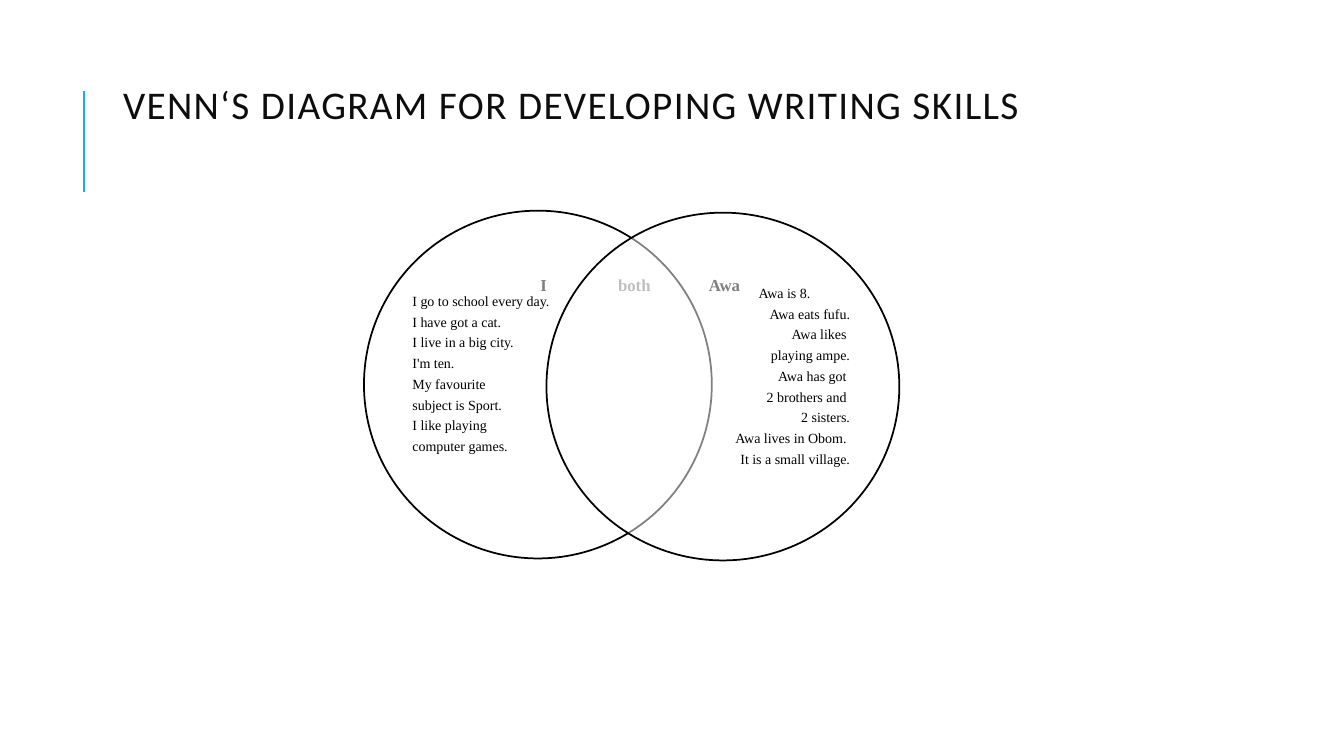
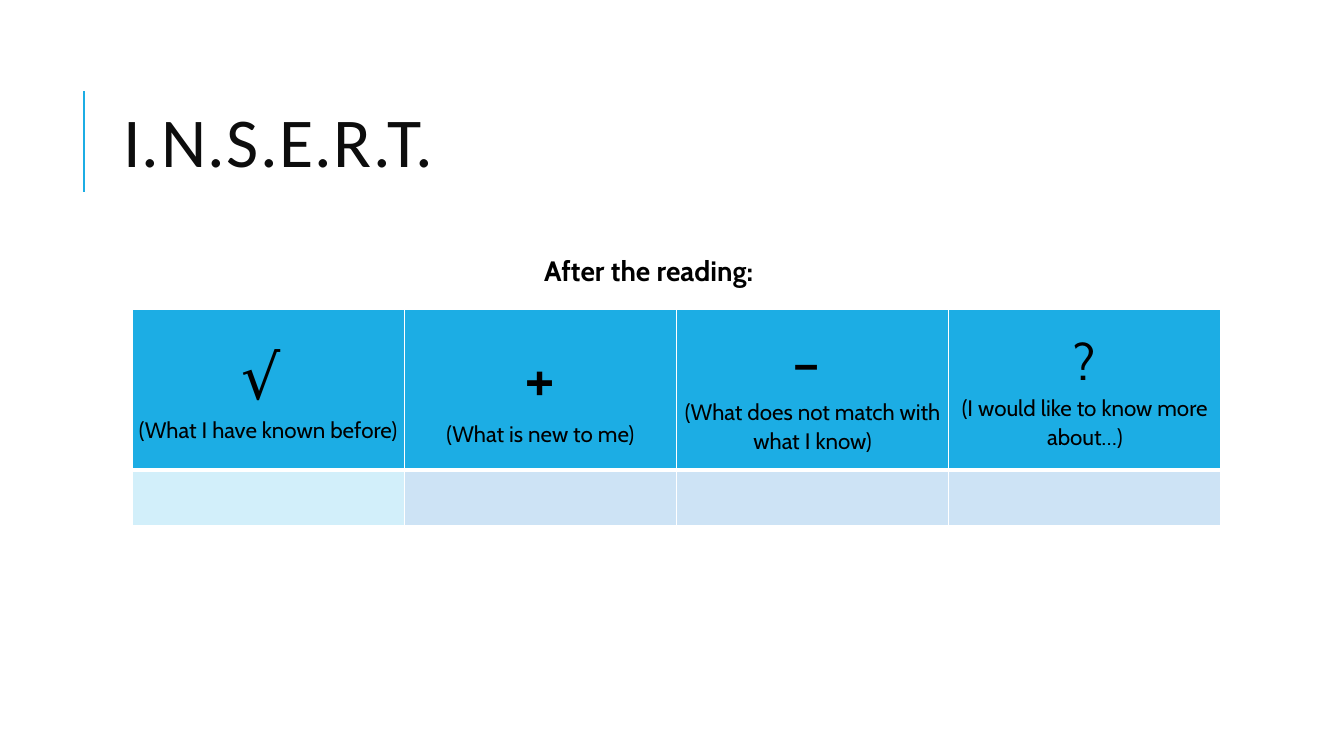
from pptx import Presentation
from pptx.dml.color import RGBColor
from pptx.enum.shapes import MSO_CONNECTOR, MSO_SHAPE
from pptx.enum.text import MSO_ANCHOR, PP_ALIGN
from pptx.oxml.ns import qn
from pptx.util import Inches, Pt
from lxml import etree

LEFT, MID, RIGHT = PP_ALIGN.LEFT, PP_ALIGN.CENTER, PP_ALIGN.RIGHT
TOP, CENTER = MSO_ANCHOR.TOP, MSO_ANCHOR.MIDDLE
OVAL, LINE = MSO_SHAPE.OVAL, MSO_CONNECTOR.STRAIGHT

# Content
VENN = "VENN‘S DIAGRAM FOR DEVELOPING WRITING SKILLS"
HEADS = [("I", 5.36), ("both", 6.13), ("Awa", 7.03)]
ME = ["I go to school every day.", "I have got a cat.",
      "I live in a big city.", "I'm ten.", "My favourite",
      "subject is Sport.", "I like playing", "computer games."]
AWA = ["Awa is 8.", "Awa eats fufu.", "Awa likes ", "playing ampe.",
       "Awa has got ", "2 brothers and ", "2 sisters.",
       "Awa lives in Obom. ", "It is a small village."]
# circle box, text box, lines, alignment
SETS = [((3.61, 2.09, 3.45, 3.45), (4.09, 2.92, 1.99, 1.65), ME, LEFT),
        ((5.42, 2.11, 3.5, 3.45), (6.41, 2.84, 2.02, 1.85), AWA, RIGHT)]

INSERT = "I.N.S.E.R.T."
LEAD = "After the reading:"
SIGNS = [("√ ", 44, "(What I have known before)"),
         ("+", 48, "(What is new to me)"),
         ("– ", 40, "(What does not match with what I know)"),
         ("?", 36, "(I would like to know more about…)")]

# Shared style
HEX = {"blue": "1CADE4", "ink": "0D0D0D", "black": "000000",
       "white": "FFFFFF", "ice": "D2EFFA", "pale": "CDE3F5"}
HEAD, BODY, SERIF = "Calibri", "Cabin", "Times New Roman"
WIDE, HIGH = 13.33, 7.5
EDGE, SPAN = 1.12, 10.63
ROWS, COL = (1.59, 0.55), 2.7


def rgb(name):
    return RGBColor.from_string(HEX[name])


def place(shape, box):
    shape.left, shape.top, shape.width, shape.height = map(Inches, box)


def inset(frame, size):
    frame.margin_left = frame.margin_right = Inches(size)
    frame.margin_top = frame.margin_bottom = Inches(size)


def style(para, font, size, color="black", bold=False, align=LEFT, gap=1.0):
    para.alignment, para.line_spacing = align, gap
    para.space_before = para.space_after = Pt(0)
    for run in para.runs:
        run.font.name, run.font.size = font, Pt(size)
        run.font.bold, run.font.color.rgb = bold, rgb(color)


def start(deck, layout, title, size):
    """New slide with the accent bar and the title."""
    slide = deck.slides.add_slide(deck.slide_layouts[layout])
    bar = slide.shapes.add_connector(
        LINE, *map(Inches, (0.83, 1.9, 0.83, 0.9)))
    bar.line.color.rgb, bar.line.width = rgb("blue"), Pt(1.5)
    etree.SubElement(bar.element.spPr, qn("a:effectLst"))
    head = slide.shapes.title
    place(head, (EDGE, 0.64, SPAN, 1.64))
    frame = head.text_frame
    frame.text, frame.vertical_anchor = title, CENTER
    para = frame.paragraphs[0]
    style(para, HEAD, size, "ink", gap=0.8)
    para.runs[0].font._element.set("spc", "100")
    return slide


def write(slide, box, lines, wrap=True):
    """Text box without insets; returns its paragraphs."""
    frame = slide.shapes.add_textbox(*map(Inches, box)).text_frame
    inset(frame, 0)
    frame.word_wrap, frame.vertical_anchor = wrap, TOP
    frame.text = "\n".join(lines)
    return frame.paragraphs


def circle(slide, box):
    oval = slide.shapes.add_shape(OVAL, *map(Inches, box))
    oval.shadow.inherit = False
    oval.fill.solid()
    oval.fill.fore_color.rgb = rgb("white")
    tone = oval.element.spPr.find(qn("a:solidFill"))[0]
    etree.SubElement(tone, qn("a:alpha"), val="50000")
    oval.line.color.rgb, oval.line.width = rgb("black"), Pt(1.25)


def paint(cell, fill, base):
    """White borders, then the fill; base is the lower border in points."""
    props = cell._tc.get_or_add_tcPr()
    for side, width in zip("LRTB", (1, 1, 1, base)):
        line = etree.SubElement(props, qn("a:ln" + side), w=str(Pt(width)))
        solid = etree.SubElement(line, qn("a:solidFill"))
        etree.SubElement(solid, qn("a:srgbClr"), val=HEX["white"])
    cell.fill.solid()
    cell.fill.fore_color.rgb = rgb(fill)


def venn(deck):
    slide = start(deck, 5, VENN, 28)
    title = slide.shapes.title.text_frame
    title.vertical_anchor, title.margin_top = TOP, Inches(0.25)
    # Headings lie under the half-clear circles
    for word, left in HEADS:
        para = write(slide, (left, 2.73, 0.5, 0.2), [word], False)[0]
        style(para, SERIF, 12, bold=True)
    for ring, box, lines, align in SETS:
        circle(slide, ring)
        paras = write(slide, box, lines)
        for para in paras:
            style(para, SERIF, 10, align=align, gap=0.9)
            para.space_after = Pt(4)
    # Awa's first line sits further in, clear of her heading
    paras[0].alignment = MID
    paras[0]._p.get_or_add_pPr().set("marL", str(Inches(0.72)))


def insert(deck):
    slide = start(deck, 1, INSERT, 50)
    body = slide.placeholders[1]
    place(body, (EDGE, 2.5, SPAN, 4.4))
    inset(body.text_frame, 0.05)
    body.text_frame.text = LEAD
    para = body.text_frame.paragraphs[0]
    style(para, BODY, 20, bold=True, align=MID, gap=0.9)
    props = para._p.get_or_add_pPr()
    props.set("marL", "0")
    props.set("indent", "0")
    etree.SubElement(props, qn("a:buNone"))

    # Table of signs with an empty row to fill in
    count = len(SIGNS)
    box = (1.31, 3.07, COL * count, sum(ROWS))
    table = slide.shapes.add_table(
        len(ROWS), count, *map(Inches, box)).table
    for row, height in zip(table.rows, ROWS):
        row.height = Inches(height)
    for col, (sign, size, note) in enumerate(SIGNS):
        table.columns[col].width = Inches(COL)
        cell = table.cell(0, col)
        paint(cell, "blue", 3)
        inset(cell, 0.01)
        cell.vertical_anchor = CENTER
        cell.text = sign + "\n" + note
        for para, points in zip(cell.text_frame.paragraphs, (size, 16)):
            style(para, BODY, points, align=MID, gap=1.07)
        paint(table.cell(1, col), "pale" if col else "ice", 1)


def main():
    deck = Presentation()
    deck.slide_width, deck.slide_height = Inches(WIDE), Inches(HIGH)
    venn(deck)
    insert(deck)
    deck.save("out.pptx")


if __name__ == "__main__":
    main()
